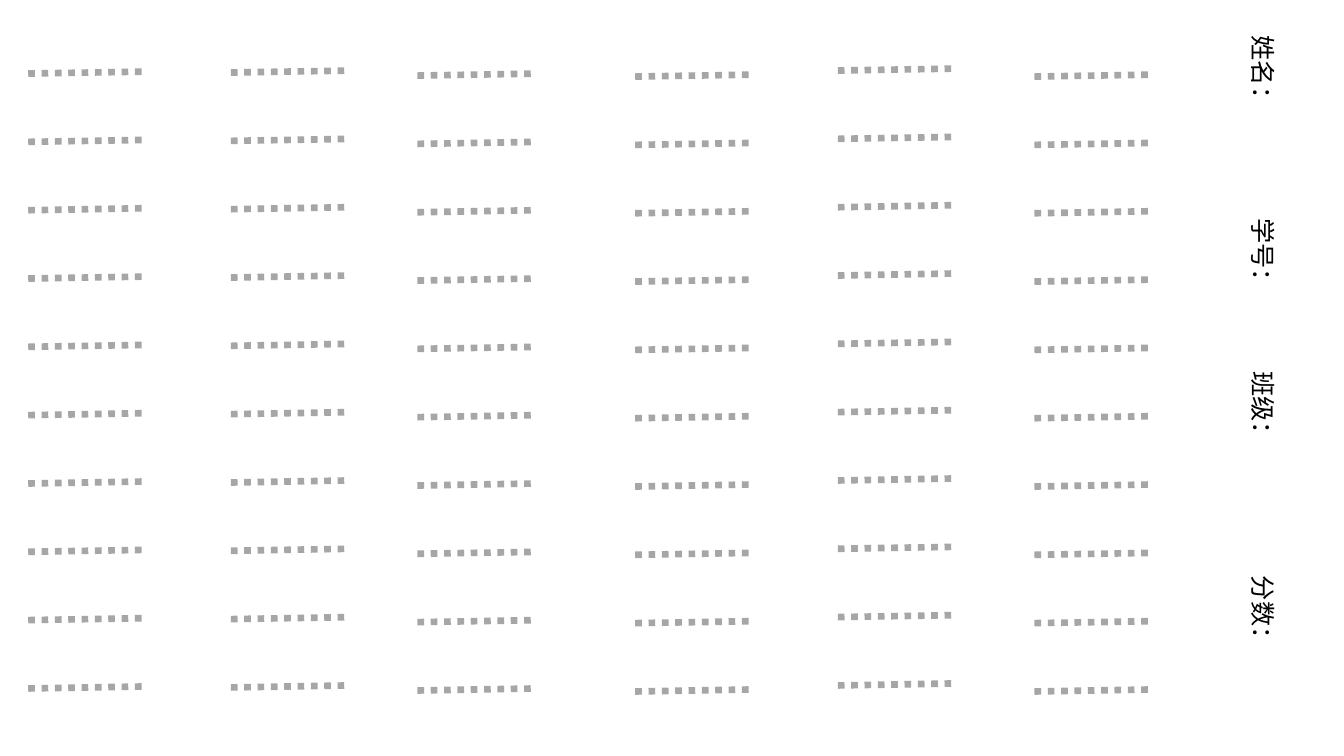
import pptx
import pptx.util
import pptx.dml.color
import pptx.enum.dml
import pptx.enum.shapes
import pptx.enum.text
import pptx.oxml.ns
from lxml import etree

Inches = pptx.util.Inches
Pt = pptx.util.Pt

COLORS = {"rule": "A6A6A6", "text": "000000"}
FONT = "Arial"

# Left end of each answer column and height of its first line, in inches
COLUMNS = [(0.28, 0.73), (2.29, 0.72), (4.14, 0.75),
           (6.3, 0.76), (8.31, 0.7), (10.26, 0.76)]
ROWS = 10
ROW_PITCH = 6.1 / (ROWS - 1)
RULE_LENGTH, RULE_RISE = 1.18, 0.02

# Student details and the top of each box before it is turned
FIELDS = [("姓名：", 0.55), ("学号：", 2.36), ("班级：", 3.88), ("分数：", 5.91)]
FIELD_LEFT, FIELD_WIDTH, FIELD_HEIGHT = 12.04, 0.99, 0.4


def rgb(name):
    return pptx.dml.color.RGBColor.from_string(COLORS[name])


def add_answer_rule(page, left, top):
    rule = page.shapes.add_connector(
        pptx.enum.shapes.MSO_CONNECTOR.STRAIGHT,
        Inches(left), Inches(top),
        Inches(left + RULE_LENGTH), Inches(top - RULE_RISE))
    rule.line.color.rgb = rgb("rule")
    rule.line.width = Pt(4.75)
    # ROUND_DOT is the sysDot preset
    rule.line.dash_style = pptx.enum.dml.MSO_LINE.ROUND_DOT
    etree.SubElement(rule._element.spPr, pptx.oxml.ns.qn("a:effectLst"))


def add_field(page, label, top):
    box = page.shapes.add_textbox(Inches(FIELD_LEFT), Inches(top),
                                  Inches(FIELD_WIDTH), Inches(FIELD_HEIGHT))
    box.rotation = 90
    frame = box.text_frame
    frame.word_wrap = True
    frame.auto_size = pptx.enum.text.MSO_AUTO_SIZE.SHAPE_TO_FIT_TEXT
    para = frame.paragraphs[0]
    para.text = label
    para.font.name = FONT
    para.font.size = Pt(18)
    para.font.color.rgb = rgb("text")


def main():
    deck = pptx.Presentation()
    deck.slide_width, deck.slide_height = Inches(13.33), Inches(7.5)
    page = deck.slides.add_slide(deck.slide_layouts[6])
    for left, first_top in COLUMNS:
        for row in range(ROWS):
            add_answer_rule(page, left, first_top + row * ROW_PITCH)
    for label, top in FIELDS:
        add_field(page, label, top)
    deck.save("out.pptx")


if __name__ == "__main__":
    main()
